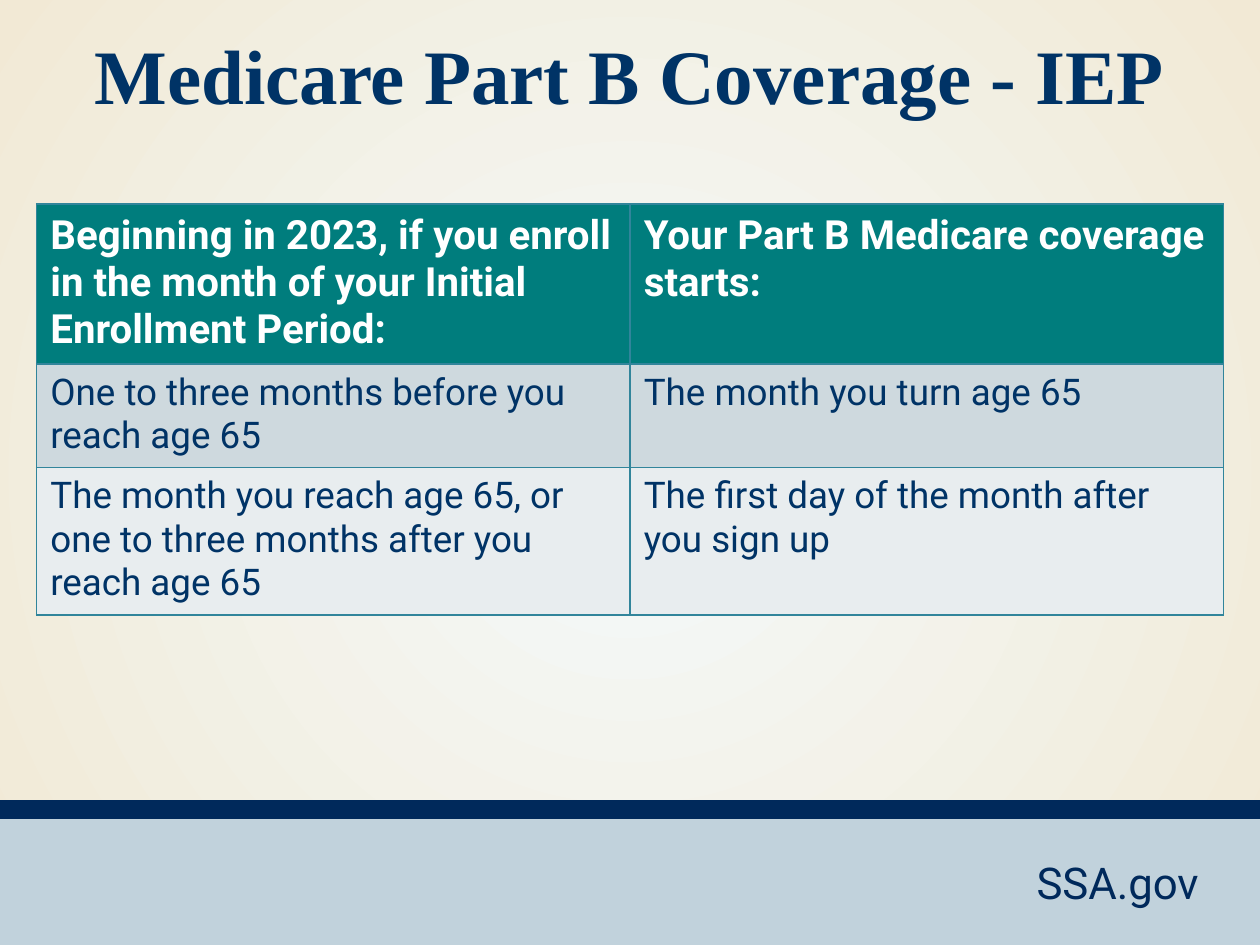
from typing import NamedTuple

from lxml.etree import SubElement
from pptx import Presentation
from pptx.dml.color import RGBColor
from pptx.enum.shapes import MSO_SHAPE
from pptx.enum.text import MSO_ANCHOR as Anchor, PP_ALIGN as Align
from pptx.oxml.ns import qn
from pptx.util import Inches, Pt

NAVY = "00295B"
BLUE = "003366"
BORDER = "31859B"


class Band(NamedTuple):
    top: float
    height: float
    fill: str


class Row(NamedTuple):
    height: float
    fill: str
    color: str
    size: int
    bold: bool
    texts: tuple[str, str]


BANDS = [Band(6.45, 1.06, "C1D2DC"), Band(6.35, 0.15, NAVY)]
ROWS = [
    Row(1.05, "007D7D", "FFFFFF", 23, True, (
        "Beginning in 2023, if you enroll in the month of your Initial Enrollment Period:",
        "Your Part B Medicare coverage starts:")),
    Row(0.68, "CED9DE", BLUE, 21, False, (
        "One to three months before you reach age 65",
        "The month you turn age 65")),
    Row(0.53, "E8EDEF", BLUE, 21, False, (
        "The month you reach age 65, or one to three months after you reach age 65",
        "The first day of the month after you sign up")),
]


def rgb(value: str) -> RGBColor:
    """Turn a hex string into a colour."""
    return RGBColor.from_string(value)


def write_text(frame, text: str, *, size: int, color: str, font="Roboto",
               bold=False, align=Align.LEFT) -> None:
    """Put one formatted run into a text frame."""
    frame.word_wrap = True
    paragraph = frame.paragraphs[0]
    paragraph.alignment = align
    run = paragraph.add_run()
    run.text = text
    run.font.name = font
    run.font.size = Pt(size)
    run.font.bold = bold
    run.font.color.rgb = rgb(color)


def set_background(slide, center: str, edge: str) -> None:
    """Fill the background with a circular gradient."""
    fill = slide.background.fill
    fill.gradient()
    for stop, color in zip(fill.gradient_stops, (center, edge)):
        stop.color.rgb = rgb(color)
    gradient = next(slide.element.iter(qn("a:gradFill")))
    gradient.remove(gradient.find(qn("a:lin")))
    circle = SubElement(gradient, qn("a:path"), {"path": "circle"})
    SubElement(circle, qn("a:fillToRect"), dict.fromkeys("ltrb", "50000"))


def add_band(slide, band: Band) -> None:
    """Draw a full-width band."""
    shape = slide.shapes.add_shape(MSO_SHAPE.RECTANGLE, Inches(0), Inches(band.top),
                                   Inches(10), Inches(band.height))
    shape.shadow.inherit = False
    shape.fill.solid()
    shape.fill.fore_color.rgb = rgb(band.fill)
    shape.line.fill.background()


def add_label(slide, left: float, top: float, width: float, height: float,
              text: str, **style) -> None:
    """Add a centred text box."""
    box = slide.shapes.add_textbox(Inches(left), Inches(top), Inches(width), Inches(height))
    box.text_frame.vertical_anchor = Anchor.MIDDLE
    write_text(box.text_frame, text, align=Align.CENTER, **style)


def set_borders(cell) -> None:
    """Draw a thin line on each side of a cell."""
    properties = cell._tc.get_or_add_tcPr()
    for index, side in enumerate(("lnL", "lnR", "lnT", "lnB")):
        line = properties.makeelement(qn(f"a:{side}"), {"w": str(Pt(1))})
        solid = SubElement(line, qn("a:solidFill"))
        SubElement(solid, qn("a:srgbClr"), {"val": BORDER})
        properties.insert(index, line)


def add_coverage_table(slide, rows: list[Row]) -> None:
    """Add the table of enrollment months and coverage starts."""
    table = slide.shapes.add_table(len(rows), 2, Inches(0.29), Inches(1.62),
                                   Inches(9.42), Inches(3.24)).table
    for column in table.columns:
        column.width = Inches(4.71)
    for table_row, row in zip(table.rows, rows):
        table_row.height = Inches(row.height)
        for cell, text in zip(table_row.cells, row.texts):
            cell.margin_left = cell.margin_right = Inches(0.11)
            cell.margin_top = cell.margin_bottom = Inches(0.06)
            cell.fill.solid()
            cell.fill.fore_color.rgb = rgb(row.fill)
            write_text(cell.text_frame, text, size=row.size, color=row.color, bold=row.bold)
            set_borders(cell)


def main() -> None:
    """Build and save the slide."""
    presentation = Presentation()
    presentation.slide_width = Inches(10)
    presentation.slide_height = Inches(7.5)
    slide = presentation.slides.add_slide(presentation.slide_layouts[6])
    set_background(slide, "F3FAFB", "F2E9D5")
    for band in BANDS:
        add_band(slide, band)
    add_label(slide, 7.84, 6.74, 2.06, 0.52, "SSA.gov", size=25, color=NAVY)
    add_label(slide, 0, 0.17, 10, 0.83, "Medicare Part B Coverage - IEP", size=44,
              color=BLUE, font="Times New Roman", bold=True)
    add_coverage_table(slide, ROWS)
    presentation.save("out.pptx")


if __name__ == "__main__":
    main()
